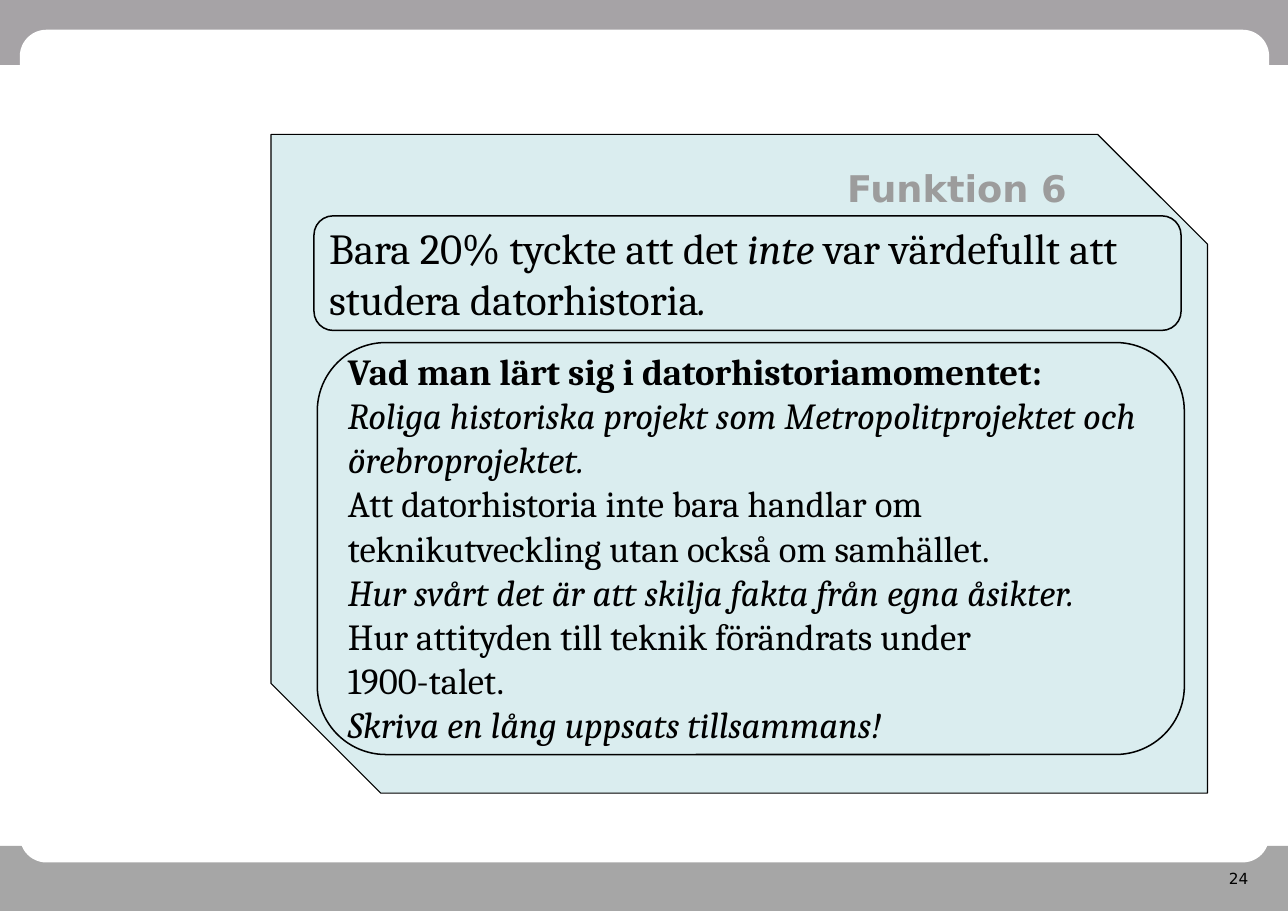
from pptx import Presentation
from pptx.dml.color import RGBColor
from pptx.enum.shapes import MSO_SHAPE
from pptx.enum.text import PP_ALIGN
from pptx.util import Pt

WIDTH, HEIGHT = 841.68, 595.44
BAND = 42.48
QUOTE = [[("Bara 20% tyckte att det ", False), ("inte", True),
          (" var värdefullt att studera datorhistoria", False), (".", True)]]
HEAD = "Vad man lärt sig i datorhistoriamomentet:"
ANSWERS = [
    ("Roliga historiska projekt som Metropolitprojektet och örebroprojektet.", True),
    ("Att datorhistoria inte bara handlar om teknikutveckling utan också om samhället.", False),
    ("Hur svårt det är att skilja fakta från egna åsikter.", True),
    ("Hur attityden till teknik förändrats under", False),
    ("1900-talet.", False),
    ("Skriva en lång uppsats tillsammans!", True),
]


def color(code):
    """Turn a hex string into a colour."""
    return RGBColor.from_string(code)


def add_form(slide, kind, box, fill=None, line=None, weight=1):
    """Draw a preset shape with optional fill and outline."""
    form = slide.shapes.add_shape(kind, *map(Pt, box))
    form.shadow.inherit = False
    if fill:
        form.fill.solid()
        form.fill.fore_color.rgb = color(fill)
    else:
        form.fill.background()
    if line:
        form.line.color.rgb = color(line)
        form.line.width = Pt(weight)
    else:
        form.line.fill.background()
    return form


def add_text(slide, box, lines, size, face="Cambria", ink="000000"):
    """Write lines, each a list of (text, italic) runs, and return the frame."""
    frame = slide.shapes.add_textbox(*map(Pt, box)).text_frame
    frame.word_wrap = True
    for i, parts in enumerate(lines):
        para = frame.paragraphs[0] if i == 0 else frame.add_paragraph()
        font = para.font
        font.name, font.size = face, Pt(size)
        font.color.rgb = color(ink)
        for text, slant in parts:
            run = para.add_run()
            run.text = text
            if len(parts) > 1:
                run.font.italic = slant
            else:
                font.italic = slant
    return frame


def add_base(slide, box, number):
    """Draw the grey bands, the white panel and the page number."""
    x, y, w, h = box
    add_form(slide, MSO_SHAPE.RECTANGLE, (x, y, w, BAND), "A6A3A6")
    add_form(slide, MSO_SHAPE.RECTANGLE, (x, y + h - BAND, w, BAND), "A6A6A6")
    panel = add_form(slide, MSO_SHAPE.ROUNDED_RECTANGLE,
                     (x + 12.96, y + 19.44, w - 25.2, h - 51.12), "FFFFFF")
    panel.adjustments[0] = 0.032
    frame = add_text(slide, (x + w - 193.68, y + h - 31.68, 175.68, 21.6),
                     [[(number, False)]], 10, "DejaVu Sans")
    frame.margin_left = frame.margin_right = Pt(7.92)
    frame.margin_top = frame.margin_bottom = Pt(4.32)
    frame.paragraphs[0].alignment = PP_ALIGN.RIGHT


def add_quote(slide, box):
    """Place the survey result in its rounded frame."""
    x, y, w, h = box
    add_text(slide, (x + 2.88, y, w, h), QUOTE, 28)
    add_form(slide, MSO_SHAPE.ROUNDED_RECTANGLE, box, line="000000")


def add_list(slide, box):
    """Place the heading and answers in their rounded frame."""
    x, y, w, h = box
    lines = [[(HEAD, False)]] + [[answer] for answer in ANSWERS]
    frame = add_text(slide, (x + 12.96, y + 0.72, w - 34.56, h), lines, 24)
    frame.paragraphs[0].font.bold = True
    add_form(slide, MSO_SHAPE.ROUNDED_RECTANGLE, box, line="000000")


def add_card(slide, box):
    """Draw the snipped card with its title, quote and answers."""
    x, y, w, h = box
    add_form(slide, MSO_SHAPE.SNIP_2_DIAG_RECTANGLE, box, "DAEDEF", "000000", 0.75)
    title = add_text(slide, (x + 369.36, y + 17.28, 175.68, 36),
                     [[("Funktion 6", False)]], 24, "DejaVu Sans", "9C9C9C")
    title.paragraphs[0].font.bold = True
    add_quote(slide, (x + 28.08, y + 53.28, w - 45.36, 74.88))
    add_list(slide, (x + 30.24, y + 136.08, w - 45.36, 269.28))


def main():
    """Build and save the slide."""
    deck = Presentation()
    deck.slide_width, deck.slide_height = Pt(WIDTH), Pt(HEIGHT)
    slide = deck.slides.add_slide(deck.slide_layouts[6])
    add_base(slide, (0, 0, WIDTH, HEIGHT), "24")
    add_card(slide, (177.12, 87.84, 612, 430.56))
    deck.save("out.pptx")


if __name__ == "__main__":
    main()
